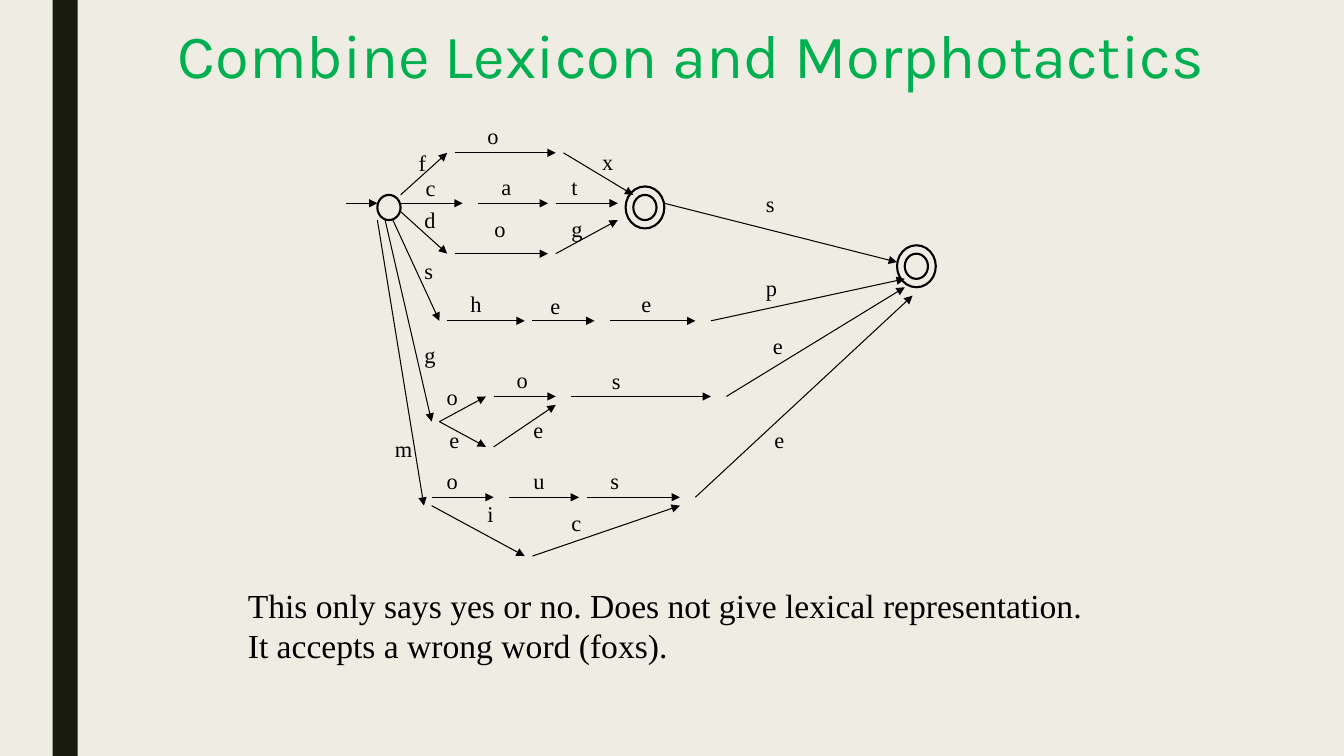
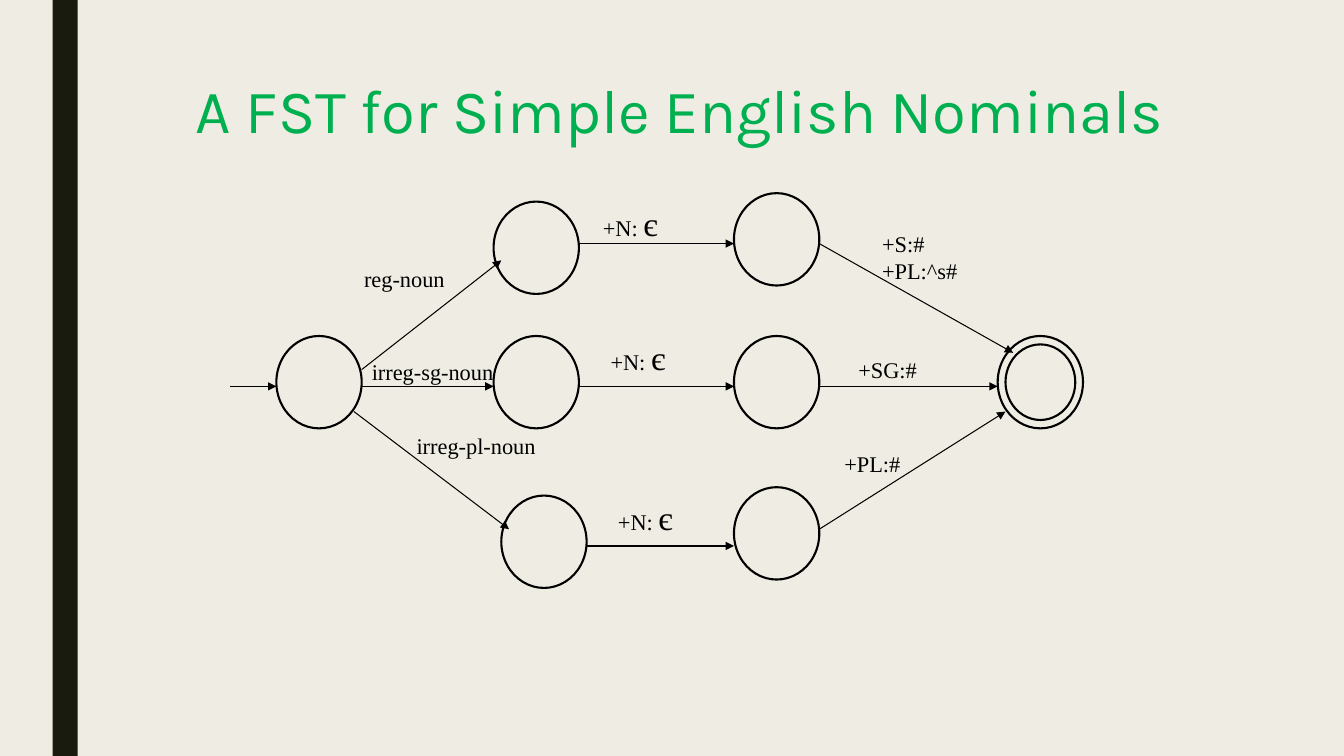
"""Build two slides of finite-state diagrams, drawn on a shared grid."""
import dataclasses
import typing

import lxml.etree
import pptx
import pptx.dml.color
import pptx.enum.shapes
import pptx.enum.text
import pptx.oxml.ns
import pptx.slide
import pptx.util

INK = "000000"
PAPER = "EFEDE3"
BAND = "191B0E"
GREEN = "00B050"
SERIF = "Times New Roman"
STEP_X = 5.54
STEP_Y = 6


class Ring(typing.NamedTuple):
    col: int
    row: int
    size: int


class Arrow(typing.NamedTuple):
    col: int
    row: int
    end_col: int
    end_row: int


class Label(typing.NamedTuple):
    text: str
    left: float
    top: float
    width: float = 28
    height: float = 26.6
    size: float = 16
    tail: str = ""


@dataclasses.dataclass
class Page:
    title: str
    left: float
    top: float
    grid_x: float
    grid_y: float
    rings: list[Ring]
    arrows: list[Arrow]
    labels: list[Label]

    def point(self, col: int, row: int) -> tuple[int, int]:
        return (pptx.util.Pt(self.grid_x + col * STEP_X),
                pptx.util.Pt(self.grid_y + row * STEP_Y))


LEXICON = Page(
    "Combine Lexicon and Morphotactics", 116, 15, 247.4, 109.2,
    rings=[Ring(4, 5, 3), Ring(72, 12, 3), Ring(71, 11, 5), Ring(37, 5, 3), Ring(36, 4, 5)],
    arrows=[
        Arrow(0, 6, 4, 6),
        Arrow(7, 5, 13, 0), Arrow(14, 0, 27, 0), Arrow(28, 0, 37, 5),
        Arrow(7, 6, 15, 6), Arrow(17, 6, 26, 6), Arrow(27, 6, 35, 6),
        Arrow(7, 7, 13, 12), Arrow(14, 12, 26, 12), Arrow(27, 12, 35, 8),
        Arrow(41, 6, 71, 13),
        Arrow(6, 8, 12, 20), Arrow(13, 20, 23, 20), Arrow(24, 20, 32, 20),
        Arrow(34, 20, 45, 20), Arrow(47, 20, 72, 15),
        Arrow(5, 8, 11, 32), Arrow(12, 32, 18, 29), Arrow(19, 29, 27, 29),
        Arrow(29, 29, 47, 29), Arrow(49, 29, 72, 16),
        Arrow(12, 32, 18, 35), Arrow(19, 35, 27, 30),
        Arrow(4, 8, 10, 42), Arrow(11, 41, 19, 41), Arrow(21, 41, 30, 41),
        Arrow(31, 41, 43, 41), Arrow(45, 41, 73, 17),
        Arrow(11, 42, 23, 48), Arrow(24, 48, 43, 42),
    ],
    labels=[
        Label("f", 292, 103), Label("o", 341, 84), Label("x", 423, 102),
        Label("c", 297, 121), Label("a", 351, 120), Label("t", 401, 120),
        Label("d", 296, 144), Label("o", 346, 150), Label("g", 401, 150),
        Label("s", 540, 132),
        Label("s", 296, 180), Label("h", 329, 204), Label("e", 386, 205),
        Label("e", 451, 204), Label("p", 540, 192),
        Label("g", 296, 240), Label("o", 312, 270), Label("o", 362, 258),
        Label("s", 430, 259), Label("e", 545, 234),
        Label("e", 314, 301), Label("e", 374, 294),
        Label("m", 275, 307), Label("o", 312, 330), Label("u", 374, 330),
        Label("s", 429, 330), Label("e", 546, 301),
        Label("i", 341, 354), Label("c", 401, 360),
        Label("This only says yes or no. Does not give lexical representation.\n"
              "It accepts a wrong word (foxs).", 170, 414, 618, 65.5, 24),
    ])

NOMINALS = Page(
    "A FST for Simple English Nominals", 108, 54, 164.2, 0,
    rings=[
        Ring(99, 40, 11), Ring(100, 41, 9), Ring(6, 40, 11),
        Ring(34, 24, 11), Ring(34, 40, 11), Ring(35, 59, 11),
        Ring(65, 23, 11), Ring(65, 40, 11), Ring(65, 58, 11),
    ],
    arrows=[
        Arrow(0, 46, 6, 46),
        Arrow(17, 44, 35, 31), Arrow(17, 46, 34, 46), Arrow(16, 49, 36, 63),
        Arrow(45, 29, 65, 29), Arrow(45, 46, 65, 46), Arrow(46, 65, 65, 65),
        Arrow(76, 29, 101, 42), Arrow(76, 46, 99, 46), Arrow(76, 63, 100, 49),
    ],
    labels=[
        Label("reg-noun", 253, 186, 75),
        Label("irreg-sg-noun", 258.5, 252, 105),
        Label("irreg-pl-noun", 290.5, 305, 103),
        Label("+N: ", 423.5, 141.5, 57, 36, tail="є"),
        Label("+N: ", 429, 237.3, 57, 36, tail="є"),
        Label("+N: ", 434.3, 351.5, 57, 36, tail="є"),
        Label("+S:#\n+PL:^s#", 623, 160.8, 72, 46),
        Label("+SG:#", 606, 250.5, 60),
        Label("+PL:#", 596, 318, 58),
    ])


def paint(color: str) -> pptx.dml.color.RGBColor:
    return pptx.dml.color.RGBColor.from_string(color)


def write(slide: pptx.slide.Slide, text: str, left: float, top: float, width: float,
          height: float, *, size: float = 16, font: str = SERIF, color: str = INK,
          tail: str = "", big: float = 24, center: bool = False, lead: float = 1) -> None:
    box = slide.shapes.add_textbox(*map(pptx.util.Pt, (left, top, width, height)))
    frame = box.text_frame
    frame.word_wrap = True
    for index, line in enumerate(text.split("\n")):
        para = frame.add_paragraph() if index else frame.paragraphs[0]
        para.line_spacing = lead
        if center:
            para.alignment = pptx.enum.text.PP_ALIGN.CENTER
        for part, points in ((line, size), (tail, big)):
            if not part:
                continue
            run = para.add_run()
            run.text = part
            run.font.size = pptx.util.Pt(points)
            run.font.name = font
            run.font.color.rgb = paint(color)


def draw_band(slide: pptx.slide.Slide) -> None:
    band = slide.shapes.add_shape(
        pptx.enum.shapes.MSO_SHAPE.RECTANGLE,
        *map(pptx.util.Pt, (37.5, 0, 18, 540)))
    band.shadow.inherit = False
    band.fill.solid()
    band.fill.fore_color.rgb = paint(BAND)
    band.line.fill.background()


def draw_ring(slide: pptx.slide.Slide, page: Page, ring: Ring) -> None:
    oval = slide.shapes.add_shape(
        pptx.enum.shapes.MSO_SHAPE.OVAL, *page.point(ring.col, ring.row),
        pptx.util.Pt(ring.size * STEP_X), pptx.util.Pt(ring.size * STEP_Y))
    oval.shadow.inherit = False
    oval.fill.background()
    oval.line.color.rgb = paint(INK)
    oval.line.width = pptx.util.Pt(1.5)


def draw_arrow(slide: pptx.slide.Slide, page: Page, arrow: Arrow) -> None:
    link = slide.shapes.add_connector(
        pptx.enum.shapes.MSO_CONNECTOR.STRAIGHT,
        *page.point(arrow.col, arrow.row), *page.point(arrow.end_col, arrow.end_row))
    link.line.color.rgb = paint(INK)
    link.line.width = pptx.util.Pt(0.75)
    qn = pptx.oxml.ns.qn
    lxml.etree.SubElement(link.line._get_or_add_ln(), qn("a:tailEnd"), type="triangle")
    lxml.etree.SubElement(link._element.spPr, qn("a:effectLst"))


def draw_page(deck: typing.Any, page: Page) -> None:
    slide = deck.slides.add_slide(deck.slide_layouts[6])
    draw_band(slide)
    write(slide, page.title, page.left, page.top, 756, 70, size=44, font="Karla",
          color=GREEN, center=True, lead=0.89)
    for ring in page.rings:
        draw_ring(slide, page, ring)
    for arrow in page.arrows:
        draw_arrow(slide, page, arrow)
    for label in page.labels:
        write(slide, label.text, label.left, label.top, label.width, label.height,
              size=label.size, tail=label.tail)


def main() -> None:
    deck = pptx.Presentation()
    deck.slide_width = pptx.util.Pt(960)
    deck.slide_height = pptx.util.Pt(540)
    back = deck.slide_master.background.fill
    back.solid()
    back.fore_color.rgb = paint(PAPER)
    for page in (LEXICON, NOMINALS):
        draw_page(deck, page)
    deck.save("out.pptx")


if __name__ == "__main__":
    main()
